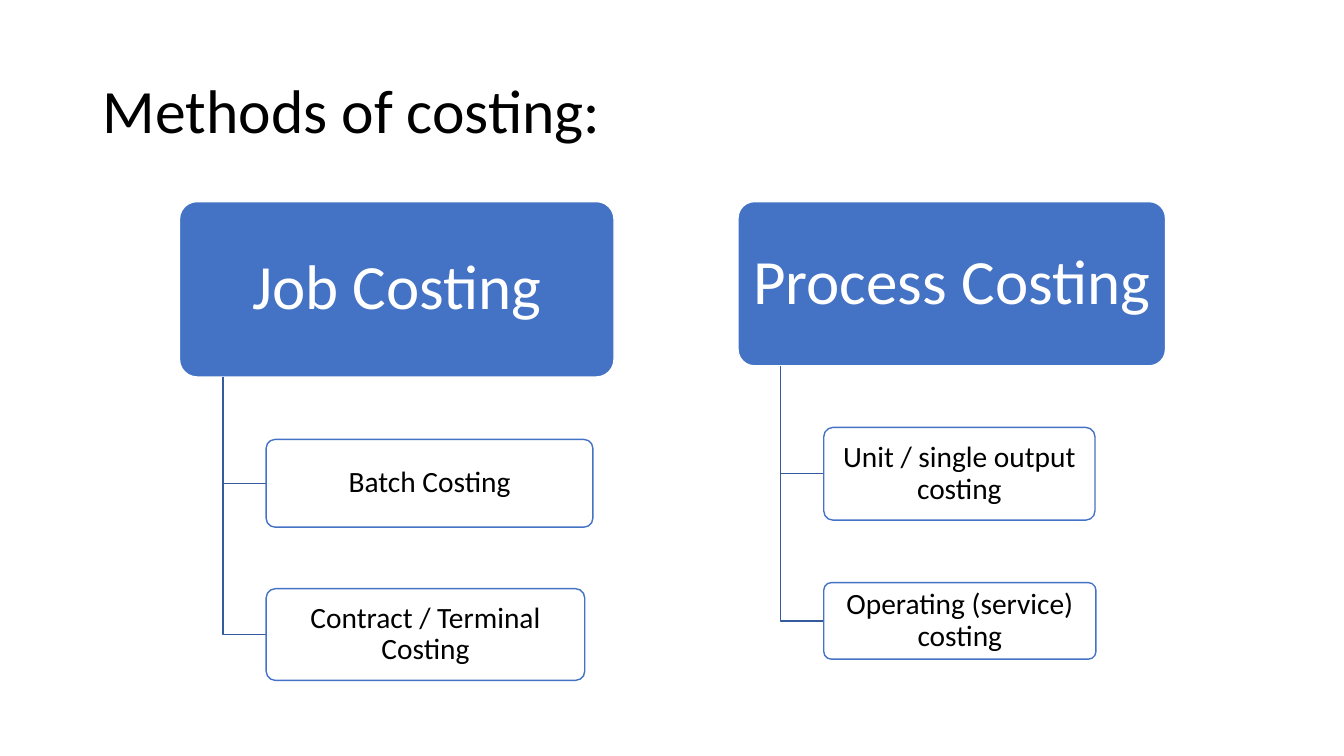
from dataclasses import dataclass

from lxml.etree import SubElement
from pptx import Presentation
from pptx.dml.color import RGBColor
from pptx.enum.shapes import MSO_SHAPE
from pptx.enum.text import MSO_ANCHOR, PP_ALIGN
from pptx.oxml.ns import qn
from pptx.util import Emu, Pt

EMU_PER_PX = 9144  # 100 px to the inch
BLUE, RAIL_BLUE, WHITE, BLACK = "4472C4", "365B9D", "FFFFFF", "000000"


@dataclass(frozen=True)
class Box:
    label: str
    left: int
    top: int
    width: int
    height: int


@dataclass(frozen=True)
class BoxStyle:
    fill: str
    opacity: int
    line: str
    ink: str
    size: int
    inset_x: int
    inset_y: int


@dataclass(frozen=True)
class Method:
    heading: Box
    variants: tuple[Box, ...]


HEADING = BoxStyle(BLUE, 100, WHITE, WHITE, 45, 6, 6)
VARIANT = BoxStyle(WHITE, 90, BLUE, BLACK, 21, 4, 3)

METHODS = (
    Method(
        Box("Job Costing", 178, 200, 431, 174),
        (
            Box("Batch Costing", 264, 436, 324, 87),
            Box("Contract / Terminal Costing", 264, 584, 316, 91),
        ),
    ),
    Method(
        Box("Process Costing", 732, 200, 424, 163),
        (
            Box("Unit / single output costing", 817, 424, 269, 92),
            Box("Operating (service) costing", 817, 578, 270, 76),
        ),
    ),
)


def px(length: float) -> Emu:
    return Emu(round(length * EMU_PER_PX))


def colour(hex_value: str) -> RGBColor:
    return RGBColor.from_string(hex_value)


def set_all(target, values: dict) -> None:
    for name, value in values.items():
        setattr(target, name, value)


def write(shape, text: str, size: int, ink: str, align: PP_ALIGN, frame_format: dict) -> None:
    frame = shape.text_frame
    frame.text = text
    set_all(frame, {"word_wrap": True, "vertical_anchor": MSO_ANCHOR.MIDDLE, **frame_format})
    paragraph = frame.paragraphs[0]
    set_all(paragraph, {"alignment": align, "line_spacing": 0.9})
    font = paragraph.runs[0].font
    set_all(font, {"name": "Calibri", "size": Pt(size)})
    font.color.rgb = colour(ink)


def outline(shape, hex_value: str) -> None:
    shape.shadow.inherit = False
    shape.line.color.rgb = colour(hex_value)
    shape.line.width = Pt(1)


def draw_box(slide, box: Box, style: BoxStyle) -> None:
    shape = slide.shapes.add_shape(
        MSO_SHAPE.ROUNDED_RECTANGLE, px(box.left), px(box.top), px(box.width), px(box.height)
    )
    shape.adjustments[0] = 0.1
    shape.fill.solid()
    shape.fill.fore_color.rgb = colour(style.fill)
    if style.opacity < 100:
        fill_colour = shape.fill._xPr.find(qn("a:solidFill"))[0]
        SubElement(fill_colour, qn("a:alpha"), val=str(style.opacity * 1000))
    outline(shape, style.line)
    insets = {
        "margin_left": px(style.inset_x),
        "margin_right": px(style.inset_x),
        "margin_top": px(style.inset_y),
        "margin_bottom": px(style.inset_y),
    }
    write(shape, box.label, style.size, style.ink, PP_ALIGN.CENTER, insets)


def draw_branch(slide, heading: Box, variant: Box) -> None:
    rail = px(heading.left + heading.width / 10)
    middle = px(variant.top + variant.height / 2)
    builder = slide.shapes.build_freeform(rail, px(heading.top + heading.height))
    builder.add_line_segments([(rail, middle), (px(variant.left), middle)], close=False)
    branch = builder.convert_to_shape()
    branch.fill.background()
    outline(branch, RAIL_BLUE)


def main() -> None:
    deck = Presentation()
    set_all(deck, {"slide_width": px(1333), "slide_height": px(750)})
    slide = deck.slides.add_slide(deck.slide_layouts[5])

    # Title
    title = slide.shapes.title
    set_all(title, {"left": px(92), "top": px(40), "width": px(1150), "height": px(145)})
    write(title, "Methods of costing:", 44, BLACK, PP_ALIGN.LEFT, {})

    # Each method with its variants hanging below
    for method in METHODS:
        draw_box(slide, method.heading, HEADING)
        for variant in method.variants:
            draw_branch(slide, method.heading, variant)
            draw_box(slide, variant, VARIANT)

    deck.save("out.pptx")


if __name__ == "__main__":
    main()
